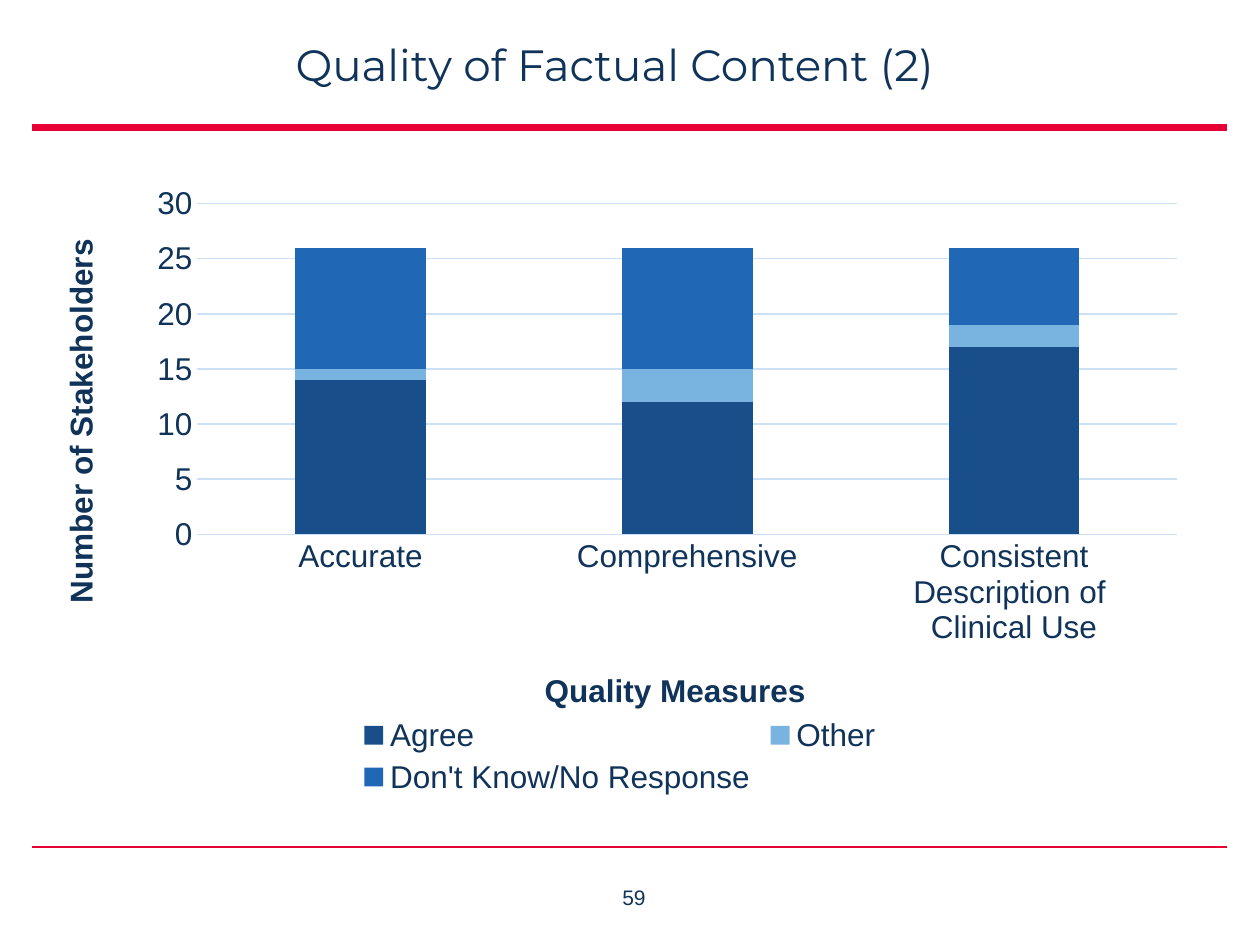
from lxml import etree
from pptx import Presentation
from pptx import util as u
from pptx.chart import data as cd
from pptx.dml import color as dc
from pptx.enum import chart as ce, shapes, text
from pptx.oxml import ns

HUES = {
    "ink": "10335A",
    "red": "E70033",
    "white": "FFFFFF",
    "grid": "CCE0F6",
}
CATS = ["Accurate", "Comprehensive", "Consistent\nDescription of \nClinical Use"]
VOTES = [
    ("Agree", [14, 12, 17], "184E8A"),
    ("Other", [1, 3, 2], "79B4E1"),
    ("Don't Know/No Response", [11, 11, 7], "2067B6"),
]
LEFT, RIGHT = u.Cm(0.64), u.Cm(24.74)


def rgb(code):
    return dc.RGBColor.from_string(code)


def style(font, size, name="Arial", bold=False):
    font.size = u.Pt(size)
    font.name = name
    font.bold = bold
    font.color.rgb = rgb(HUES["ink"])


def write(frame, words, size, name="Arial", bold=False):
    para = frame.paragraphs[0]
    para.alignment = text.PP_ALIGN.CENTER
    run = para.add_run()
    run.text = words
    style(run.font, size, name, bold)


def add_rule(slide, top, width):
    rule = slide.shapes.add_connector(
        shapes.MSO_CONNECTOR.STRAIGHT, LEFT, top, RIGHT, top)
    rule.line.color.rgb = rgb(HUES["red"])
    rule.line.width = u.Pt(width)
    etree.SubElement(rule._element.spPr, ns.qn("a:effectLst"))


def add_panel(slide):
    panel = slide.shapes.add_shape(
        shapes.MSO_SHAPE.RECTANGLE, LEFT, u.Cm(2.57), u.Cm(24.13), u.Cm(13.94))
    panel.shadow.inherit = False
    panel.fill.solid()
    panel.fill.fore_color.rgb = rgb(HUES["white"])
    panel.line.color.rgb = rgb(HUES["white"])
    panel.line.width = u.Pt(0.75)


def set_title(slide, words):
    title = slide.shapes.title
    title.left, title.top = LEFT, u.Cm(0.76)
    title.width, title.height = u.Cm(23.5), u.Cm(1.8)
    frame = title.text_frame
    frame.margin_left = frame.margin_right = 0
    frame.margin_top = frame.margin_bottom = 0
    frame.vertical_anchor = text.MSO_ANCHOR.TOP
    write(frame, words, 25, "Montserrat")


def add_number(slide, words):
    box = slide.shapes.add_textbox(u.Cm(11.51), u.Cm(17.7), u.Cm(2.54), u.Cm(0.97))
    box.text_frame.word_wrap = False
    write(box.text_frame, words, 12)


def place(part, index, **spots):
    """Give a chart part a manual layout, in shares of the chart's size."""
    for old in part.findall(ns.qn("c:layout")):
        part.remove(old)
    layout = etree.Element(ns.qn("c:layout"))
    manual = etree.SubElement(layout, ns.qn("c:manualLayout"))
    for tag, val in spots.items():
        etree.SubElement(manual, ns.qn("c:" + tag), val=str(val))
    part.insert(index, layout)


def name_axis(axis, words, x, y):
    title = axis.axis_title
    write(title.text_frame, words, 18, bold=True)
    place(title._element, 1, xMode="edge", yMode="edge", x=x, y=y)
    style(axis.tick_labels.font, 18)
    axis.major_tick_mark = axis.minor_tick_mark = ce.XL_TICK_MARK.NONE


def add_chart(slide):
    data = cd.CategoryChartData()
    data.categories = CATS
    for name, vals, _ in VOTES:
        data.add_series(name, vals)
    chart = slide.shapes.add_chart(
        ce.XL_CHART_TYPE.COLUMN_STACKED,
        u.Cm(0.86), u.Cm(3.58), u.Cm(23.27), u.Cm(12.57), data).chart
    style(chart.font, 10)
    chart.has_title = False

    # Columns
    plot = chart.plots[0]
    plot.gap_width, plot.overlap = 150, 100
    plot.vary_by_categories = False
    for series, (_, _, hue) in zip(plot.series, VOTES):
        series.format.fill.solid()
        series.format.fill.fore_color.rgb = rgb(hue)
    place(chart._chartSpace.chart.plotArea, 0, layoutTarget="inner",
          xMode="edge", yMode="edge", x=0.134, y=0.042, w=0.849, h=0.53)

    # Axes
    cat, val = chart.category_axis, chart.value_axis
    name_axis(cat, "Quality Measures", 0.43, 0.78)
    name_axis(val, "Number of Stakeholders", 0.01, 0.09)
    turn = val.axis_title.text_frame._txBody.bodyPr
    turn.set("rot", "-5400000")
    turn.set("vert", "horz")
    val.minimum_scale, val.maximum_scale, val.major_unit = 0, 30, 5
    val.format.line.fill.background()
    for part in (cat, val.major_gridlines):
        part.format.line.color.rgb = rgb(HUES["grid"])
        part.format.line.width = u.Pt(0.75)

    # Legend
    chart.has_legend = True
    chart.legend.position = ce.XL_LEGEND_POSITION.BOTTOM
    chart.legend.include_in_layout = False
    style(chart.legend.font, 18)


def main():
    deck = Presentation()
    deck.slide_width, deck.slide_height = u.Cm(25.4), u.Cm(19.05)
    slide = deck.slides.add_slide(deck.slide_layouts[5])

    # Frame
    add_panel(slide)
    add_rule(slide, u.Cm(2.57), 4)
    add_rule(slide, u.Cm(17.08), 1)
    add_number(slide, "59")

    # Content
    set_title(slide, "Quality of Factual Content (2)")
    add_chart(slide)
    deck.save("out.pptx")


if __name__ == "__main__":
    main()
